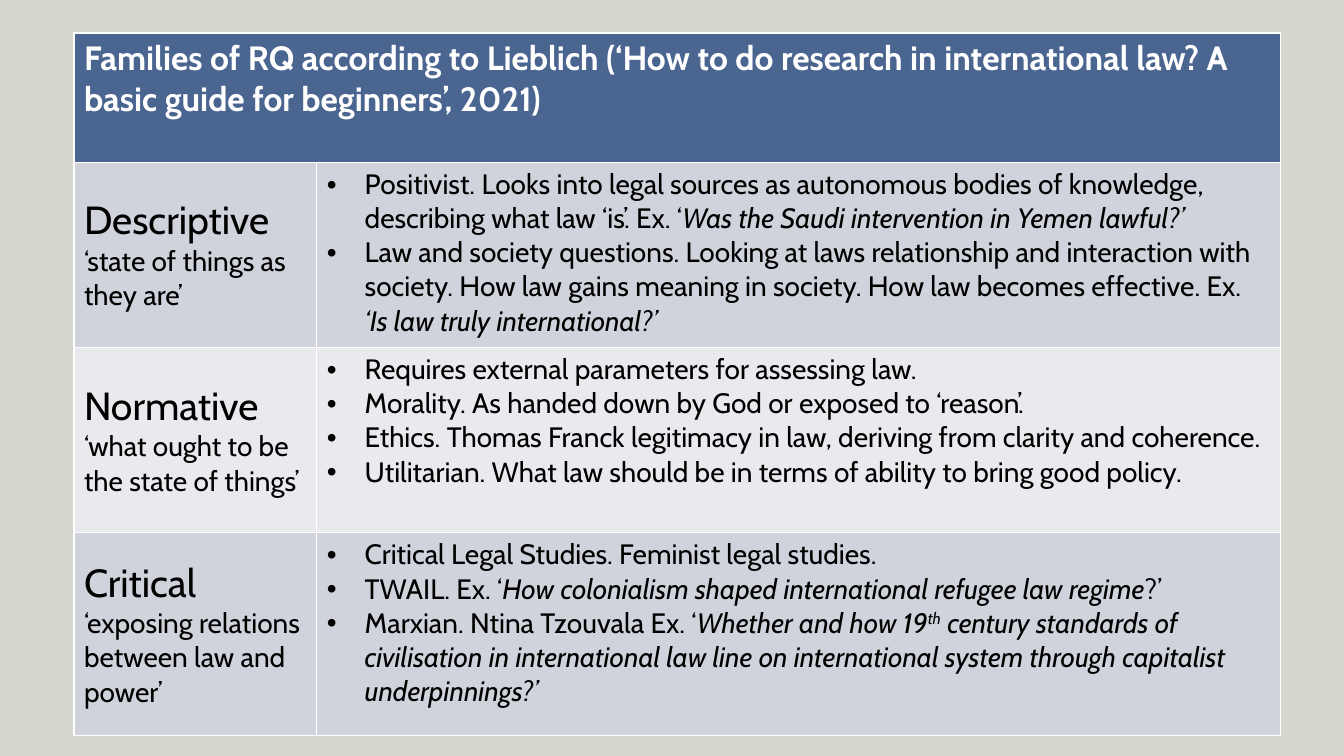
from lxml.etree import SubElement
from pptx import Presentation
from pptx.dml.color import RGBColor
from pptx.enum.text import MSO_ANCHOR
from pptx.oxml import parse_xml
from pptx.oxml.ns import nsdecls, qn
from pptx.util import Pt

BACKGROUND = RGBColor(0xD7, 0xD7, 0xD0)
HEADER_BLUE = RGBColor(0x4A, 0x65, 0x90)
BAND_DARK = RGBColor(0xD0, 0xD3, 0xDB)
BAND_LIGHT = RGBColor(0xE9, 0xEA, 0xEE)
WHITE = RGBColor(0xFF, 0xFF, 0xFF)
BLACK = RGBColor(0, 0, 0)
FONT = "Cabin"
PLAIN, ITALIC, SUPERSCRIPT = "plain", "italic", "superscript"

COLUMN_WIDTHS = [173.5, 688.3]
ROW_HEIGHTS = [92.4, 132.3, 132.3, 144.8]
HEADER = ("Families of RQ according to Lieblich (‘How to do research in "
          "international law? A basic guide for beginners’, 2021)")

# Each family: name, meaning, and bullets made of (text, style) pieces.
FAMILIES = [
    ("Descriptive", "‘state of things as they are’", [
        [("Positivist. Looks into legal sources as autonomous bodies of "
          "knowledge, describing what law ‘is’. Ex. ‘", PLAIN),
         ("Was the Saudi intervention in Yemen lawful?’", ITALIC)],
        [("Law and society questions. Looking at laws relationship and "
          "interaction with society. How law gains meaning in society. "
          "How law becomes effective. Ex. ", PLAIN),
         ("‘Is law truly international?’", ITALIC)],
    ]),
    ("Normative", "‘what ought to be the state of things’", [
        [("Requires external parameters for assessing law.", PLAIN)],
        [("Morality. As handed down by God or exposed to ‘reason’.", PLAIN)],
        [("Ethics. Thomas Franck legitimacy in law, deriving from clarity "
          "and coherence.", PLAIN)],
        [("Utilitarian. What law should be in terms of ability to bring "
          "good policy.", PLAIN)],
    ]),
    ("Critical", "‘exposing relations between law and power’", [
        [("Critical Legal Studies. Feminist legal studies.", PLAIN)],
        [("TWAIL. Ex. ‘", PLAIN),
         ("How colonialism shaped international refugee law regime", ITALIC),
         ("?’", PLAIN)],
        [("Marxian. Ntina Tzouvala Ex. ‘", PLAIN),
         ("Whether and how 19", ITALIC),
         ("th", SUPERSCRIPT),
         (" century standards of civilisation in international law line on "
          "international system through capitalist underpinnings?’", ITALIC)],
    ]),
]


def style_cell(cell, color):
    """Fill the cell and give it thin white borders on all sides."""
    cell.fill.solid()
    cell.fill.fore_color.rgb = color
    properties = cell._tc.get_or_add_tcPr()
    for index, side in enumerate(("lnL", "lnR", "lnT", "lnB")):
        properties.insert(index, parse_xml(
            f'<a:{side} {nsdecls("a")} w="{Pt(1)}"><a:solidFill>'
            f'<a:srgbClr val="{WHITE}"/></a:solidFill></a:{side}>'))


def style_paragraph(paragraph, size, color=BLACK, bold=False):
    paragraph.font.name = FONT
    paragraph.font.size = Pt(size)
    paragraph.font.color.rgb = color
    paragraph.font.bold = bold


def add_bullet_mark(paragraph):
    properties = paragraph._p.get_or_add_pPr()
    properties.set("marL", str(Pt(27)))
    properties.set("indent", str(-Pt(27)))
    mark_font = parse_xml(f'<a:buFont {nsdecls("a")} typeface="Arial"/>')
    properties.insert(0, mark_font)
    mark = SubElement(properties, qn("a:buChar"))
    mark.set("char", "•")
    mark_font.addnext(mark)


def write_header(cell):
    style_cell(cell, HEADER_BLUE)
    cell.text = HEADER
    style_paragraph(cell.text_frame.paragraphs[0], 24, WHITE, bold=True)


def write_family(cell, name, meaning):
    cell.vertical_anchor = MSO_ANCHOR.MIDDLE
    cell.text = f"{name}\n{meaning}"
    for paragraph, size in zip(cell.text_frame.paragraphs, (28, 20)):
        style_paragraph(paragraph, size)


def write_bullets(cell, bullets):
    frame = cell.text_frame
    for index, pieces in enumerate(bullets):
        paragraph = frame.add_paragraph() if index else frame.paragraphs[0]
        add_bullet_mark(paragraph)
        style_paragraph(paragraph, 20)
        for text, style in pieces:
            run = paragraph.add_run()
            run.text = text
            run.font.italic = style != PLAIN
            if style == SUPERSCRIPT:
                run._r.get_or_add_rPr().set("baseline", "30000")


def add_families_table(slide):
    frame = slide.shapes.add_table(
        len(ROW_HEIGHTS), len(COLUMN_WIDTHS), Pt(52.8), Pt(23.6),
        Pt(sum(COLUMN_WIDTHS)), Pt(sum(ROW_HEIGHTS)))
    table = frame.table
    for column, width in zip(table.columns, COLUMN_WIDTHS):
        column.width = Pt(width)
    for row, height in zip(table.rows, ROW_HEIGHTS):
        row.height = Pt(height)

    table.cell(0, 0).merge(table.cell(0, 1))
    write_header(table.cell(0, 0))
    for row, (name, meaning, bullets) in enumerate(FAMILIES, start=1):
        family_cell, bullets_cell = table.cell(row, 0), table.cell(row, 1)
        for cell in (family_cell, bullets_cell):
            style_cell(cell, BAND_DARK if row % 2 else BAND_LIGHT)
        write_family(family_cell, name, meaning)
        write_bullets(bullets_cell, bullets)


def main():
    presentation = Presentation()
    presentation.slide_width = Pt(960)
    presentation.slide_height = Pt(540)
    slide = presentation.slides.add_slide(presentation.slide_layouts[6])
    slide.background.fill.solid()
    slide.background.fill.fore_color.rgb = BACKGROUND
    add_families_table(slide)
    presentation.save("out.pptx")


if __name__ == "__main__":
    main()
